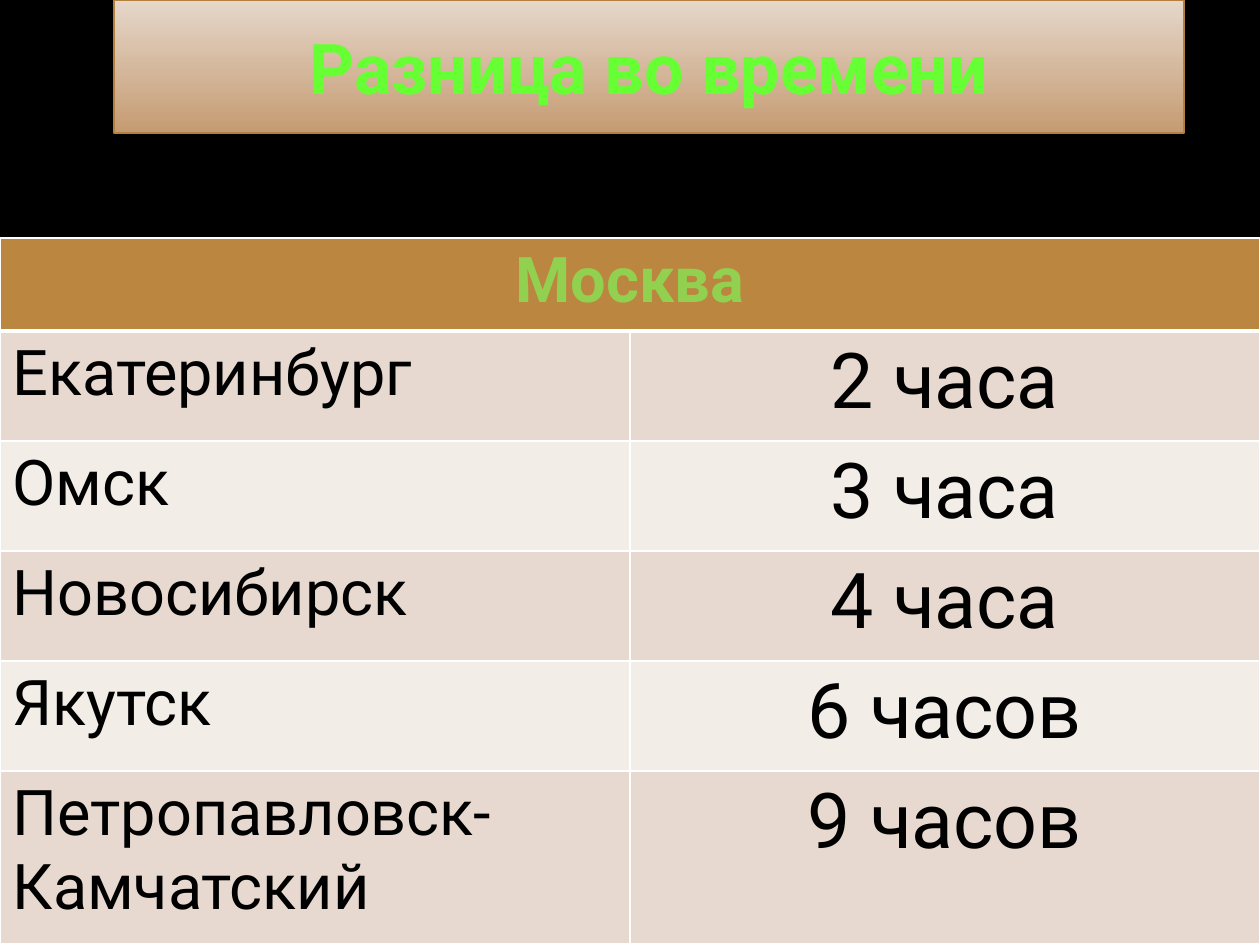
from lxml.etree import SubElement
from pptx import Presentation
from pptx.dml.color import RGBColor
from pptx.enum.shapes import MSO_SHAPE as SHAPE
from pptx.enum.text import MSO_ANCHOR as ANCHOR, PP_ALIGN as ALIGN
from pptx.oxml.ns import qn
from pptx.util import Pt

TITLE = "Разница во времени"
HEADER = "Москва"
ROWS = [
    ("Екатеринбург", "2 часа"),
    ("Омск", "3 часа"),
    ("Новосибирск", "4 часа"),
    ("Якутск", "6 часов"),
    ("Петропавловск-Камчатский", "9 часов"),
]

BLACK = RGBColor(0x00, 0x00, 0x00)
WHITE = RGBColor(0xFF, 0xFF, 0xFF)
LIME = RGBColor(0x66, 0xFF, 0x33)
GREEN = RGBColor(0x92, 0xD0, 0x50)
BROWN = RGBColor(0xBB, 0x86, 0x40)
EDGE = RGBColor(0xB3, 0x80, 0x3D)
GRADIENT = [RGBColor(0xE6, 0xD7, 0xCA), RGBColor(0xC5, 0x9B, 0x72)]
BANDS = [RGBColor(0xE7, 0xD9, 0xCF), RGBColor(0xF3, 0xED, 0xE8)]

SLIDE_W, SLIDE_H = 1260, 945
TITLE_BOX = (114, 0, 1070, 133)
TABLE_TOP = 238
HEIGHTS = [93, 110, 110, 110, 110, 173]


def px(n):
    return round(n * 914400 / 126)


def write(tf, text, align, size, color, bold=False):
    p = tf.paragraphs[0]
    p.alignment = align
    r = p.add_run()
    r.text = text
    fmt = {"name": "Roboto", "size": Pt(size), "bold": bold}
    for key, value in fmt.items():
        setattr(r.font, key, value)
    r.font.color.rgb = color


def style_cell(cell, color, top, bottom):
    tcPr = cell._tc.get_or_add_tcPr()
    for side, width in {"L": 1, "R": 1, "T": top, "B": bottom}.items():
        ln = SubElement(tcPr, qn(f"a:ln{side}"), w=str(Pt(width)))
        fill = SubElement(ln, qn("a:solidFill"))
        SubElement(fill, qn("a:srgbClr"), val=str(WHITE))
    cell.fill.solid()
    cell.fill.fore_color.rgb = color


def add_title(slide):
    s = slide.shapes.add_shape(SHAPE.RECTANGLE, *map(px, TITLE_BOX))
    s.shadow.inherit = False
    s.fill.gradient()
    s.fill.gradient_angle = 270
    for stop, color, position in zip(s.fill.gradient_stops, GRADIENT, (0, 1)):
        stop.color.rgb = color
        stop.position = position
    s.line.color.rgb = EDGE
    s.line.width = Pt(0.75)
    s.text_frame.word_wrap = True
    s.text_frame.vertical_anchor = ANCHOR.MIDDLE
    write(s.text_frame, TITLE, ALIGN.CENTER, 40, LIME, True)


def add_times(slide):
    box = (0, TABLE_TOP, SLIDE_W, sum(HEIGHTS))
    table = slide.shapes.add_table(len(HEIGHTS), 2, *map(px, box)).table
    for row, height in zip(table.rows, HEIGHTS):
        row.height = px(height)
    for cell in table.rows[0].cells:
        style_cell(cell, BROWN, 1, 3)
    table.cell(0, 0).merge(table.cell(0, 1))
    write(table.cell(0, 0).text_frame, HEADER, ALIGN.CENTER, 36, GREEN, True)
    for i, (city, hours) in enumerate(ROWS):
        cells = table.rows[i + 1].cells
        columns = [(city, ALIGN.LEFT, 36), (hours, ALIGN.CENTER, 44)]
        for cell, (text, align, size) in zip(cells, columns):
            style_cell(cell, BANDS[i % 2], 1 if i else 3, 1)
            write(cell.text_frame, text, align, size, BLACK)


def main():
    prs = Presentation()
    prs.slide_width, prs.slide_height = px(SLIDE_W), px(SLIDE_H)
    slide = prs.slides.add_slide(prs.slide_layouts[6])
    slide.background.fill.solid()
    slide.background.fill.fore_color.rgb = BLACK
    add_title(slide)
    add_times(slide)
    prs.save("out.pptx")


if __name__ == "__main__":
    main()
